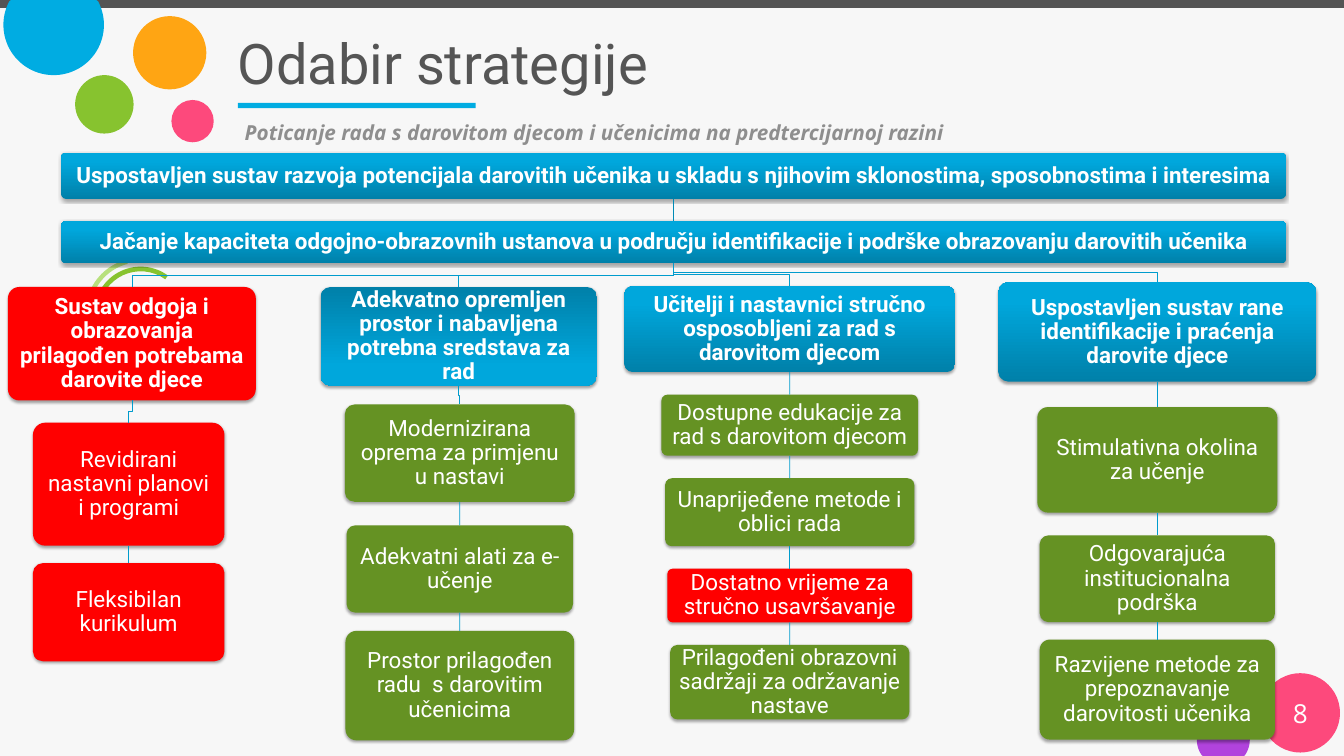
import math

import pptx
import pptx.util
import pptx.oxml
import pptx.oxml.ns
from pptx.dml.color import RGBColor
from pptx.enum.shapes import MSO_CONNECTOR, MSO_SHAPE
from pptx.enum.text import MSO_ANCHOR, PP_ALIGN
from pptx.util import Cm

SLIDE_W, SLIDE_H = 50.8, 28.58
BACKGROUND = RGBColor(0xF7, 0xF7, 0xF7)
DARK = RGBColor(0x54, 0x54, 0x54)
TITLE = RGBColor(0x55, 0x55, 0x55)
SUBTITLE = RGBColor(0x8E, 0x8E, 0x8E)
WHITE = RGBColor(0xFF, 0xFF, 0xFF)
PINK = RGBColor(0xFD, 0x49, 0x7C)
BLUE = RGBColor(0x00, 0xAC, 0xE2)
LIME = RGBColor(0x87, 0xC3, 0x2F)
PALE_LIME = RGBColor(0xB8, 0xE0, 0x7D)
ORANGE = RGBColor(0xFF, 0xA5, 0x13)
PURPLE = RGBColor(0xB1, 0x43, 0xDD)
RED = RGBColor(0xFF, 0x00, 0x00)
GREEN = RGBColor(0x65, 0x92, 0x23)
GRADIENT_DARK = RGBColor(0x00, 0x80, 0xA9)
GRADIENT_LIGHT = RGBColor(0x00, 0xA7, 0xDC)
LINK = RGBColor(0x00, 0x9C, 0xCD)
TRUNK = RGBColor(0x00, 0x8A, 0xB5)

SHADOW = (
    '<a:outerShdw %s blurRad="39370" dist="22860" dir="5400000" rotWithShape="0">'
    '<a:srgbClr val="000000"><a:alpha val="35000"/></a:srgbClr></a:outerShdw>'
    % pptx.oxml.ns.nsdecls("a")
)


def paint(sp, color):
    sp.shadow.inherit = False
    sp.fill.solid()
    sp.fill.fore_color.rgb = color
    sp.line.fill.background()


def add_plain(slide, kind, x, y, w, h, color):
    sp = slide.shapes.add_shape(kind, Cm(x), Cm(y), Cm(w), Cm(h))
    paint(sp, color)
    return sp


def add_cut_circle(slide, cx, cy, radius, color):
    """Circle cut off by the top or bottom edge of the slide."""
    points = []
    for deg in range(0, 360, 4):
        a = math.radians(deg)
        y = min(max(cy + radius * math.sin(a), 0), SLIDE_H)
        points.append((Cm(cx + radius * math.cos(a)), Cm(y)))
    fb = slide.shapes.build_freeform(*points[0])
    fb.add_line_segments(points[1:], close=True)
    paint(fb.convert_to_shape(), color)


def set_text(sp, text, size, font, color, align, margins, anchor=MSO_ANCHOR.MIDDLE,
             bold=False, italic=False, spacing=1.0):
    tf = sp.text_frame
    tf.word_wrap = True
    tf.vertical_anchor = anchor
    tf.margin_left = tf.margin_right = Cm(margins[0])
    tf.margin_top = tf.margin_bottom = Cm(margins[1])
    p = tf.paragraphs[0]
    p.alignment = align
    p.line_spacing = spacing
    r = p.add_run()
    r.text = text
    r.font.size = pptx.util.Pt(size)
    r.font.name = font
    r.font.color.rgb = color
    r.font.bold = bold
    r.font.italic = italic


def add_label(slide, x, y, w, h, text, size, font, color, align=PP_ALIGN.LEFT, **style):
    sp = slide.shapes.add_textbox(Cm(x), Cm(y), Cm(w), Cm(h))
    set_text(sp, text, size, font, color, align, (0.46, 0.23), **style)


def add_decoration(slide, w, h):
    add_plain(slide, MSO_SHAPE.RECTANGLE, 0, 0, w, 0.3, DARK)
    add_cut_circle(slide, 2.03, 0.94, 1.9, BLUE)
    add_cut_circle(slide, 46.24, h - 0.61, 1, PURPLE)
    for x, y, d, color in [(6.48, 3.78, 1.6, PINK), (2.84, 2.84, 2.21, LIME),
                           (5.03, 0.61, 2.77, ORANGE), (w - 3.15, h - 3.13, 3, PINK)]:
        add_plain(slide, MSO_SHAPE.OVAL, x, y, d, d, color)
    # Two open rings behind the first column
    for x, y, d, turn, adjust, color in [
            (3.23, 9.75, 4.14, 60, (189.41, 117.33, 0.04), PALE_LIME),
            (3.56, 10.08, 3.51, 110.3, (194.52, 117.42, 0.05), LIME)]:
        sp = add_plain(slide, MSO_SHAPE.BLOCK_ARC, x, y, d, d, color)
        sp.rotation = turn
        for i, value in enumerate(adjust):
            sp.adjustments[i] = value


def add_heading(slide, x, y, w):
    add_plain(slide, MSO_SHAPE.RECTANGLE, x + 0.46, y + 3.2, 8.99, 0.2, BLUE)
    add_label(slide, x, y, w, 3.35, "Odabir strategije", 60, "Roboto", TITLE)
    add_label(slide, x + 0.26, y + 3.6, w, 1.4,
              "Poticanje rada s darovitom djecom i učenicima na predtercijarnoj razini",
              22.2, "Open Sans", SUBTITLE, anchor=MSO_ANCHOR.TOP, bold=True, italic=True)


def add_box(slide, x, y, w, h, text, color=None, angle=90):
    """Rounded box: flat when a colour is given, else a bold blue gradient."""
    sp = add_plain(slide, MSO_SHAPE.ROUNDED_RECTANGLE, x, y, w, h, color or BLUE)
    sp.adjustments[0] = 0.1
    if color is None:
        sp.fill.gradient()
        sp.fill.gradient_angle = angle
        stops = sp.fill.gradient_stops
        for stop, place, shade in zip(stops, (0, 0.8), (GRADIENT_DARK, GRADIENT_LIGHT)):
            stop.position = place
            stop.color.rgb = shade
    effects = sp._element.spPr.find(pptx.oxml.ns.qn("a:effectLst"))
    effects.append(pptx.oxml.parse_xml(SHADOW))
    return sp


def add_text_box(slide, x, y, w, h, text, color=None, angle=90, bold=False):
    sp = add_box(slide, x, y, w, h, text, color, angle)
    set_text(sp, text, 24, "Roboto", WHITE, PP_ALIGN.CENTER, (0.25, 0.25),
             bold=bold, spacing=0.9)
    return sp


def link(slide, upper, lower, color=LINK):
    """Join bottom centre to top centre, bending halfway when they do not line up."""
    x1, y1 = upper.left + upper.width // 2, upper.top + upper.height
    x2, y2 = lower.left + lower.width // 2, lower.top
    if abs(x1 - x2) < Cm(0.02):
        ln = slide.shapes.add_connector(MSO_CONNECTOR.STRAIGHT, x1, y1, x2, y2)
        ln.begin_connect(upper, 2)
        ln.end_connect(lower, 0)
        pptx.oxml.ns.qn("a:effectLst")
        ln._element.spPr.append(pptx.oxml.parse_xml(
            "<a:effectLst %s/>" % pptx.oxml.ns.nsdecls("a")))
    else:
        middle = (y1 + y2) // 2
        fb = slide.shapes.build_freeform(x1, y1)
        fb.add_line_segments([(x1, middle), (x2, middle), (x2, y2)], close=False)
        ln = fb.convert_to_shape()
        ln.shadow.inherit = False
        ln.fill.background()
    ln.line.color.rgb = color
    ln.line.width = pptx.util.Pt(0.75)


def add_column(slide, parent, x, y, w, h, head, items, color=None, angle=90, shift=0):
    """Head box with a chain of items below: gap, width, height, text, colour."""
    above = add_text_box(slide, x, y, w, h, head, color, angle, bold=True)
    link(slide, parent, above)
    axis, bottom = x + w / 2 + shift, y + h
    for gap, item_w, item_h, text, fill in items:
        top = bottom + gap
        sp = add_text_box(slide, axis - item_w / 2, top, item_w, item_h, text, fill)
        link(slide, above, sp)
        above, bottom = sp, top + item_h


def add_goal_tree(slide, x, y, w):
    goal = add_text_box(
        slide, x, y, w, 1.75, "Uspostavljen sustav razvoja potencijala darovitih učenika "
        "u skladu s njihovim sklonostima, sposobnostima i interesima", bold=True)
    aim = add_text_box(
        slide, x, y + 2.59, w, 1.6, "Jačanje kapaciteta odgojno-obrazovnih ustanova "
        "u području identifikacije i podrške obrazovanju darovitih učenika", bold=True)
    link(slide, goal, aim, TRUNK)

    add_column(slide, aim, x - 2.02, y + 5.08, 9.37, 4.29,
               "Sustav odgoja i obrazovanja prilagođen potrebama darovite djece", [
                   (0.84, 7.24, 4.65, "Revidirani nastavni planovi i programi", RED),
                   (0.66, 7.24, 3.71, "Fleksibilan kurikulum", RED),
               ], color=RED, shift=-0.12)
    add_column(slide, aim, x + 9.8, y + 5.08, 10.44, 3.73,
               "Adekvatno opremljen prostor i nabavljena potrebna sredstava za rad", [
                   (0.71, 8.69, 3.68, "Modernizirana oprema za primjenu u nastavi", GREEN),
                   (0.89, 8.56, 3.3, "Adekvatni alati za e-učenje", GREEN),
                   (0.69, 8.64, 4.14, "Prostor prilagođen radu  s darovitim učenicima", GREEN),
               ], angle=270, shift=0.04)
    add_column(slide, aim, x + 21.28, y + 5.05, 12.5, 3.25,
               "Učitelji i nastavnici stručno osposobljeni za rad s darovitom djecom", [
                   (0.85, 9.7, 2.31, "Dostupne edukacije za rad s darovitom djecom", GREEN),
                   (0.85, 9.42, 2.57, "Unaprijeđene metode i oblici rada", GREEN),
                   (0.85, 9.25, 2.03, "Dostatno vrijeme za stručno usavršavanje", RED),
                   (0.85, 9.04, 2.82, "Prilagođeni obrazovni sadržaji za održavanje nastave",
                    GREEN),
               ])
    add_column(slide, aim, x + 35.42, y + 4.9, 12.01, 3.76,
               "Uspostavljen sustav rane identifikacije i praćenja darovite djece", [
                   (0.96, 9.07, 3.99, "Stimulativna okolina za učenje", GREEN),
                   (0.86, 8.89, 3.28, "Odgovarajuća institucionalna podrška", GREEN),
                   (0.66, 8.89, 3.78, "Razvijene metode za prepoznavanje darovitosti učenika",
                    GREEN),
               ])


def main():
    prs = pptx.Presentation()
    prs.slide_width, prs.slide_height = Cm(SLIDE_W), Cm(SLIDE_H)
    slide = prs.slides.add_slide(prs.slide_layouts[6])
    slide.background.fill.solid()
    slide.background.fill.fore_color.rgb = BACKGROUND
    add_decoration(slide, SLIDE_W, SLIDE_H)
    add_heading(slide, 8.53, 0.69, 39.85)
    # Page number
    add_label(slide, 47.65, 26.21, 3, 1.52, "8", 28, "Open Sans", WHITE, PP_ALIGN.CENTER)
    add_goal_tree(slide, 2.32, 5.77, 46.28)
    prs.save("out.pptx")


if __name__ == "__main__":
    main()
